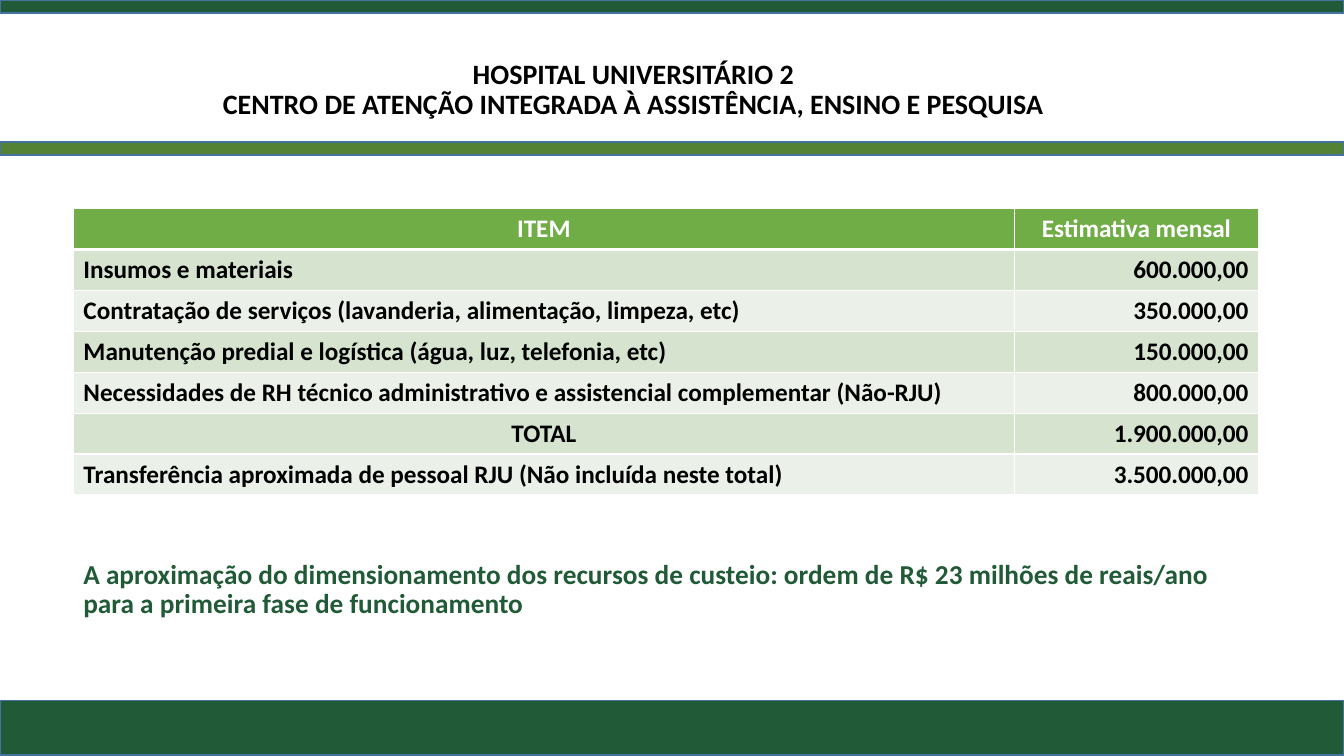
"""Build the slide with the monthly cost estimate of a university hospital."""
from typing import NamedTuple

from lxml import etree
from pptx import Presentation
from pptx import util as u
from pptx.dml import color as dml
from pptx.enum import shapes, text
from pptx.oxml import ns

COLORS = {
    "dark": "215A36",
    "olive": "548235",
    "outline": "43739E",
    "header": "70AD47",
    "odd": "D5E3CF",
    "even": "EBF1E9",
    "white": "FFFFFF",
    "black": "000000",
}
SLIDE_WIDTH, SLIDE_HEIGHT = 33.87, 19.05
ROW_HEIGHT = 1.03
COLUMN_WIDTHS = (23.71, 6.16)
LEFT, CENTER, RIGHT = text.PP_ALIGN.LEFT, text.PP_ALIGN.CENTER, text.PP_ALIGN.RIGHT


class Band(NamedTuple):
    """Horizontal band across the slide, in centimetres."""
    top: float
    height: float
    color: str


class Cost(NamedTuple):
    """Table row with its item and monthly estimate."""
    item: str
    estimate: str
    item_align: text.PP_ALIGN = LEFT
    estimate_align: text.PP_ALIGN = RIGHT


BANDS = (
    Band(17.65, 1.38, "dark"),
    Band(3.58, 0.33, "olive"),
    Band(0, 0.33, "dark"),
)
COSTS = (
    Cost("ITEM", "Estimativa mensal", CENTER, CENTER),
    Cost("Insumos e materiais", "600.000,00"),
    Cost("Contratação de serviços (lavanderia, alimentação, limpeza, etc)", "350.000,00"),
    Cost("Manutenção predial e logística (água, luz, telefonia, etc)", "150.000,00"),
    Cost("Necessidades de RH técnico administrativo e assistencial complementar (Não-RJU)",
         "800.000,00"),
    Cost("TOTAL", "1.900.000,00", CENTER),
    Cost("Transferência aproximada de pessoal RJU (Não incluída neste total)", "3.500.000,00"),
)
TITLE = ("HOSPITAL UNIVERSITÁRIO 2\v"
         "CENTRO DE ATENÇÃO INTEGRADA À ASSISTÊNCIA, ENSINO E PESQUISA")
CONCLUSION = ("A aproximação do dimensionamento dos recursos de custeio: ordem de "
              "R$ 23 milhões de reais/ano para a primeira fase de funcionamento")


def rgb(name: str) -> dml.RGBColor:
    """Return a named colour."""
    return dml.RGBColor.from_string(COLORS[name])


def apply(target, formats: dict) -> None:
    """Set each format value on the target."""
    for attribute, value in formats.items():
        setattr(target, attribute, value)


def write(frame, words: str, size: float, color: str, align: text.PP_ALIGN) -> None:
    """Fill a text frame with one bold paragraph."""
    frame.text = words
    paragraph = frame.paragraphs[0]
    paragraph.alignment = align
    for run in paragraph.runs:
        apply(run.font, {"name": "Calibri", "size": u.Pt(size), "bold": True})
        run.font.color.rgb = rgb(color)


def write_block(block, words: str, size: float, color: str, align: text.PP_ALIGN) -> None:
    """Fill a free-standing block of text, centred vertically."""
    frame = block.text_frame
    apply(frame, {"word_wrap": True, "auto_size": text.MSO_AUTO_SIZE.NONE,
                  "vertical_anchor": text.MSO_ANCHOR.MIDDLE})
    write(frame, words, size, color, align)
    apply(frame.paragraphs[0], {"line_spacing": 0.9, "space_before": u.Pt(0)})


def draw_band(slide, band: Band) -> None:
    """Draw one full-width band."""
    stripe = slide.shapes.add_shape(shapes.MSO_SHAPE.RECTANGLE, 0, u.Cm(band.top),
                                    u.Cm(SLIDE_WIDTH), u.Cm(band.height))
    stripe.shadow.inherit = False
    stripe.fill.solid()
    stripe.fill.fore_color.rgb = rgb(band.color)
    stripe.line.color.rgb = rgb("outline")
    stripe.line.width = u.Pt(1)


def add_borders(cell, top: float, bottom: float) -> None:
    """Give a cell white borders, with top and bottom widths in points."""
    properties = cell._tc.get_or_add_tcPr()
    for side, width in (("lnL", 1), ("lnR", 1), ("lnT", top), ("lnB", bottom)):
        border = etree.SubElement(properties, ns.qn(f"a:{side}"), w=str(u.Pt(width)))
        fill = etree.SubElement(border, ns.qn("a:solidFill"))
        etree.SubElement(fill, ns.qn("a:srgbClr"), val=COLORS["white"])


def draw_costs(slide) -> None:
    """Draw the table of costs."""
    costs = slide.shapes.add_table(len(COSTS), len(COLUMN_WIDTHS), u.Cm(1.85), u.Cm(5.26),
                                   u.Cm(sum(COLUMN_WIDTHS)),
                                   u.Cm(ROW_HEIGHT * len(COSTS))).table
    for column, width in zip(costs.columns, COLUMN_WIDTHS):
        column.width = u.Cm(width)
    for index, cost in enumerate(COSTS):
        costs.rows[index].height = u.Cm(ROW_HEIGHT)
        fill = "header" if index == 0 else ("even", "odd")[index % 2]
        ink = "white" if index == 0 else "black"
        entries = ((cost.item, cost.item_align), (cost.estimate, cost.estimate_align))
        for cell, (words, align) in zip(costs.rows[index].cells, entries):
            add_borders(cell, 3 if index == 1 else 1, 3 if index == 0 else 1)
            cell.fill.solid()
            cell.fill.fore_color.rgb = rgb(fill)
            write(cell.text_frame, words, 18, ink, align)


def main() -> None:
    """Build and save the slide."""
    deck = Presentation()
    apply(deck, {"slide_width": u.Cm(SLIDE_WIDTH), "slide_height": u.Cm(SLIDE_HEIGHT)})
    slide = deck.slides.add_slide(deck.slide_layouts[5])
    for band in BANDS:
        draw_band(slide, band)
    heading = slide.shapes.title
    apply(heading, {"left": u.Cm(5.03), "top": u.Cm(0.81),
                    "width": u.Cm(21.87), "height": u.Cm(2.92)})
    write_block(heading, TITLE, 20, "black", CENTER)
    draw_costs(slide)
    conclusion = slide.shapes.add_textbox(u.Cm(1.85), u.Cm(13.03), u.Cm(29.87), u.Cm(3.68))
    write_block(conclusion, CONCLUSION, 19.5, "dark", LEFT)
    deck.save("out.pptx")


if __name__ == "__main__":
    main()
